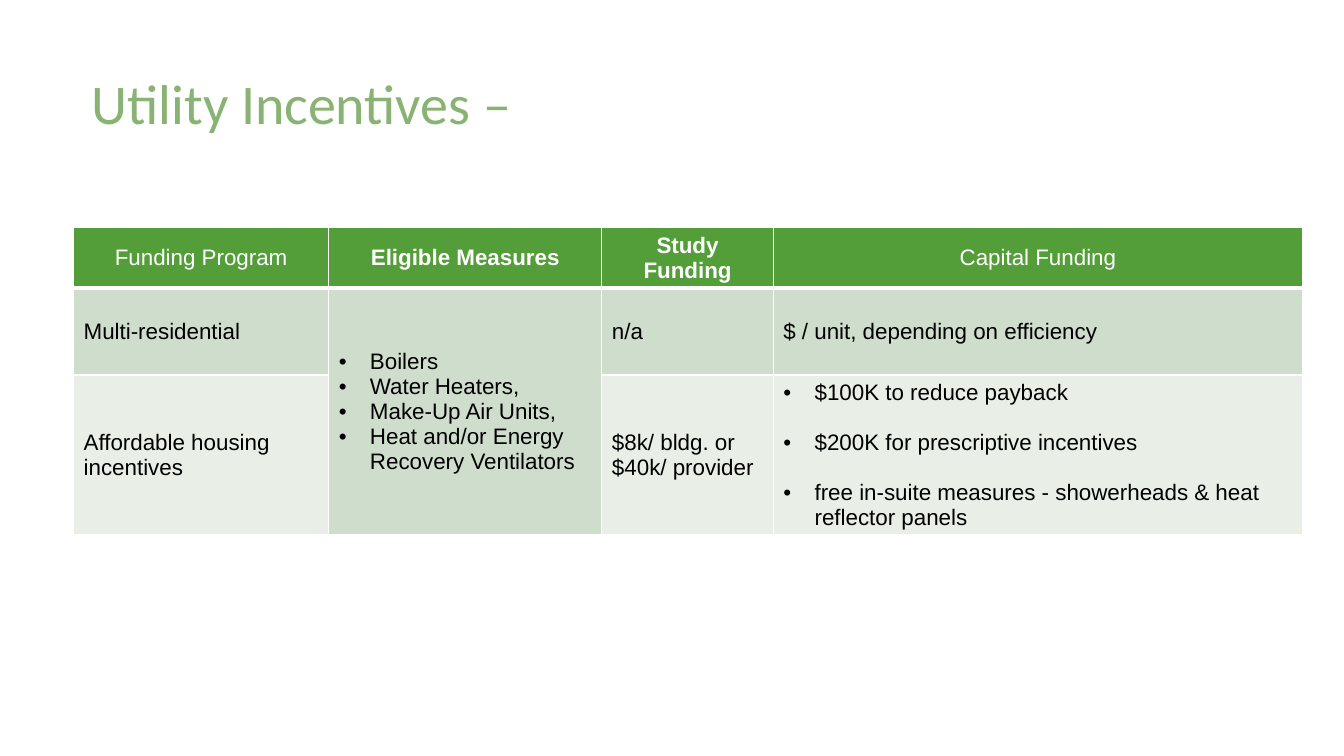
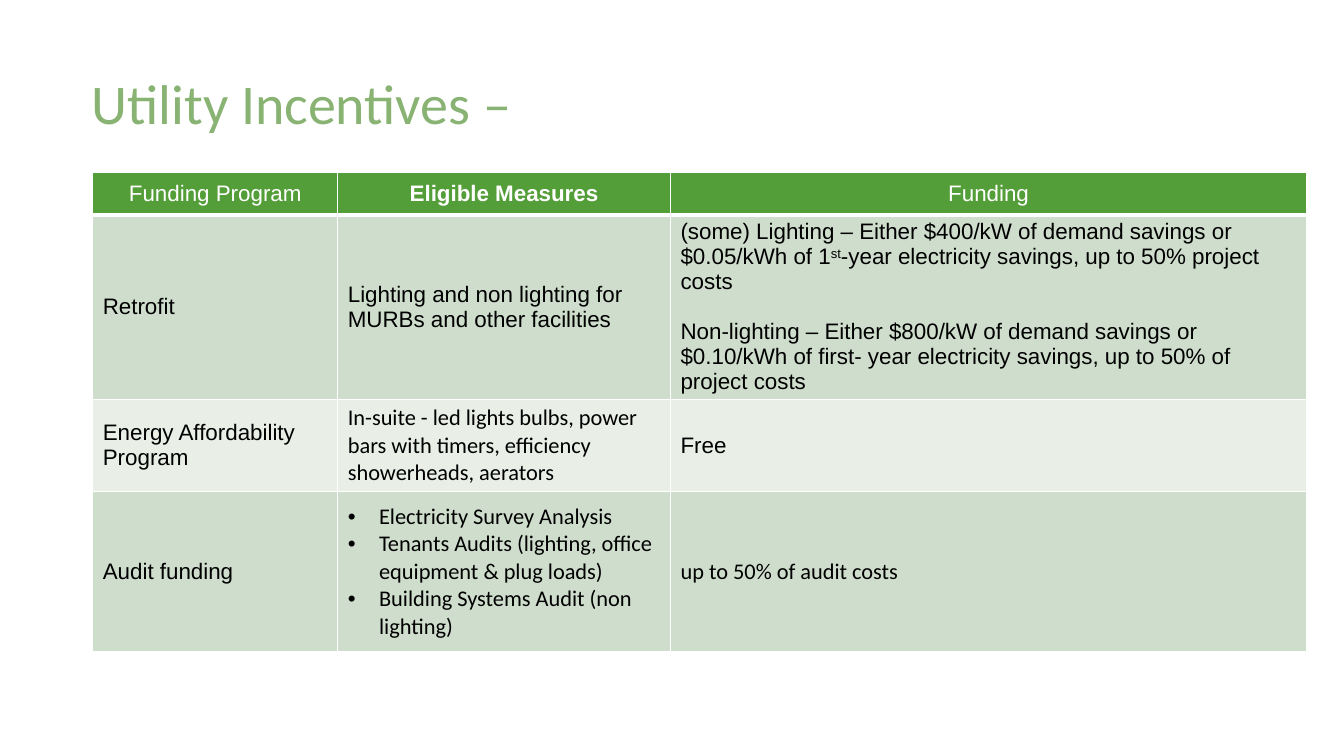
from dataclasses import dataclass

from lxml import etree
from pptx import Presentation
from pptx.dml.color import RGBColor
from pptx.enum.text import MSO_ANCHOR, MSO_AUTO_SIZE, PP_ALIGN
from pptx.oxml.ns import qn
from pptx.util import Inches, Pt

TOP, MIDDLE = MSO_ANCHOR.TOP, MSO_ANCHOR.MIDDLE
LEFT, CENTER = PP_ALIGN.LEFT, PP_ALIGN.CENTER
NO_FIT = MSO_AUTO_SIZE.NONE

COLORS = {
    "title": "88B373",
    "header": "549E39",
    "band_dark": "CFDECC",
    "band_light": "E9EFE7",
    "white": "FFFFFF",
    "black": "000000",
}
TITLE_FONT, BODY_FONT = "Calibri", "Arial"
TITLE_ONLY = 5
BULLET_INDENT = Inches(0.31)


@dataclass
class CellText:
    """Paragraphs of one cell; a paragraph is a string or a list of (text, raised) runs."""
    paragraphs: list
    bulleted: bool = False
    gap: int = 0
    font: str = BODY_FONT


def rgb(name):
    return RGBColor.from_string(COLORS[name])


def add_title(slide, text):
    title = slide.shapes.title
    title.left, title.top = Inches(0.81), Inches(0.71)
    title.width, title.height = Inches(8.88), Inches(1.66)
    frame = title.text_frame
    frame.auto_size, frame.word_wrap = NO_FIT, True
    frame.vertical_anchor = TOP
    paragraph = frame.paragraphs[0]
    paragraph.alignment, paragraph.line_spacing = LEFT, 0.9
    run = paragraph.add_run()
    run.text = text
    run.font.name, run.font.size = TITLE_FONT, Pt(40)
    run.font.color.rgb = rgb("title")


def add_bullet(paragraph):
    properties = paragraph._p.get_or_add_pPr()
    properties.set("marL", str(BULLET_INDENT))
    properties.set("indent", str(-BULLET_INDENT))
    color = etree.SubElement(properties, qn("a:buClr"))
    etree.SubElement(color, qn("a:srgbClr"), val=COLORS["black"])
    etree.SubElement(properties, qn("a:buFont"), typeface="Arial")
    etree.SubElement(properties, qn("a:buChar"), char="•")


def set_borders(cell, top, bottom):
    properties = cell._tc.get_or_add_tcPr()
    for side, points in (("L", 1), ("R", 1), ("T", top), ("B", bottom)):
        line = etree.SubElement(properties, qn(f"a:ln{side}"), w=str(Pt(points)))
        fill = etree.SubElement(line, qn("a:solidFill"))
        etree.SubElement(fill, qn("a:srgbClr"), val=COLORS["white"])


def style_cell(cell, row):
    set_borders(cell, 3 if row == 1 else 1, 3 if row == 0 else 1)
    cell.vertical_anchor = MIDDLE
    cell.fill.solid()
    band = "band_dark" if row % 2 else "band_light"
    cell.fill.fore_color.rgb = rgb(band if row else "header")


def write_cell(cell, content, color="black", bold=False, align=LEFT):
    frame = cell.text_frame
    for index, runs in enumerate(content.paragraphs):
        paragraph = frame.add_paragraph() if index else frame.paragraphs[0]
        paragraph.alignment = align
        if index and content.gap:
            paragraph.space_before = Pt(content.gap)
        if content.bulleted:
            add_bullet(paragraph)
        for text, raised in [(runs, False)] if isinstance(runs, str) else runs:
            run = paragraph.add_run()
            run.text = text
            run.font.name, run.font.size = content.font, Pt(16)
            run.font.bold = bold
            run.font.color.rgb = rgb(color)
            if raised:
                run._r.get_or_add_rPr().set("baseline", "30000")


def add_funding_table(slide, left, top, widths, heights, headers, body):
    """Headers are (text, bold) pairs; a None in the body continues the cell above."""
    table = slide.shapes.add_table(
        len(heights), len(widths), Inches(left), Inches(top),
        Inches(sum(widths)), Inches(sum(heights))).table
    table.first_row = table.horz_banding = False
    for column, width in zip(table.columns, widths):
        column.width = Inches(width)
    for row, height in zip(table.rows, heights):
        row.height = Inches(height)

    for column, (text, bold) in enumerate(headers):
        cell = table.cell(0, column)
        style_cell(cell, 0)
        write_cell(cell, CellText([text]), "white", bold, CENTER)

    for row, contents in enumerate(body, start=1):
        for column, content in enumerate(contents):
            cell = table.cell(row, column)
            style_cell(cell, row)
            if content is None:
                table.cell(row - 1, column).merge(cell)
                continue
            if isinstance(content, str):
                content = CellText([content])
            write_cell(cell, content)


def add_gas_slide(slide):
    measures = CellText(
        ["Boilers", "Water Heaters,", "Make-Up Air Units,",
         "Heat and/or Energy Recovery Ventilators"], bulleted=True)
    capital = CellText(
        ["$100K to reduce payback", "$200K for prescriptive incentives",
         "free in-suite measures - showerheads & heat reflector panels"],
        bulleted=True, gap=18)
    study = CellText(["$8k/ bldg. or", "$40k/ provider"])
    add_funding_table(
        slide, 0.73, 2.26, [2.53, 2.71, 1.7, 5.25], [0.6, 0.86, 1.57],
        [("Funding Program", False), ("Eligible Measures", True),
         ("Study Funding", True), ("Capital Funding", False)],
        [["Multi-residential", measures, "n/a", "$ / unit, depending on efficiency"],
         ["Affordable housing incentives", None, study, capital]])


def add_electricity_slide(slide):
    retrofit = CellText(
        [[("(some) Lighting – Either $400/kW of demand savings or $0.05/kWh of 1", False),
          ("st", True),
          ("-year electricity savings, up to 50% project costs", False)],
         "Non-lighting – Either $800/kW of demand savings or $0.10/kWh of "
         "first- year electricity savings, up to 50% of project costs"], gap=18)
    in_suite = CellText(
        ["In-suite - led lights bulbs, power bars with timers, "
         "efficiency showerheads, aerators"], font="Calibri")
    audits = CellText(
        ["Electricity Survey Analysis",
         "Tenants Audits (lighting, office equipment & plug loads)",
         "Building Systems Audit (non lighting)"], bulleted=True, font="Calibri")
    audit_share = CellText(["up to 50% of audit costs"], font="Calibri")
    add_funding_table(
        slide, 0.92, 1.71, [2.43, 3.3, 6.31], [0.42, 1.83, 0.91, 1.59],
        [("Funding Program", False), ("Eligible Measures", True), ("Funding", False)],
        [["Retrofit", "Lighting and non lighting for MURBs and other facilities", retrofit],
         ["Energy Affordability Program", in_suite, "Free"],
         ["Audit funding", audits, audit_share]])


def main():
    deck = Presentation()
    deck.slide_width, deck.slide_height = Inches(13.33), Inches(7.5)
    for add_content in (add_gas_slide, add_electricity_slide):
        slide = deck.slides.add_slide(deck.slide_layouts[TITLE_ONLY])
        add_title(slide, "Utility Incentives –")
        add_content(slide)
    deck.save("out.pptx")


if __name__ == "__main__":
    main()
